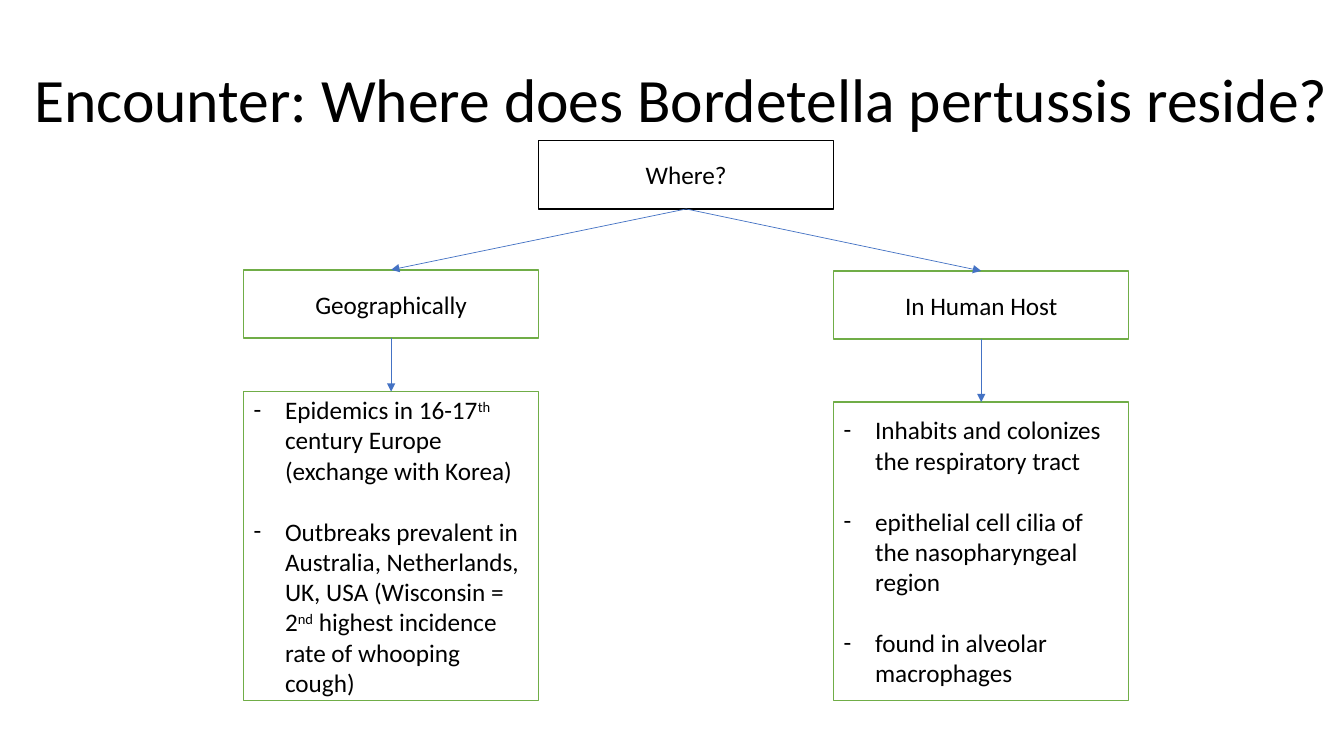
import dataclasses

import pptx
import pptx.dml.color
import pptx.enum.shapes
import pptx.enum.text
import pptx.oxml
import pptx.oxml.ns
import pptx.util

PX = 9525
WIDE, HIGH = 1280, 720
ALIGN = pptx.enum.text.PP_ALIGN
TOP, BASE = 0, 2  # connection sites of a rectangle


@dataclasses.dataclass(frozen=True)
class Theme:
    font: str = "Calibri"
    ink: str = "000000"
    paper: str = "FFFFFF"
    leaf: str = "70AD47"
    arrow: str = "4472C4"
    head: int = 44
    body: int = 18
    edge: float = 1
    thin: float = 0.5
    gap: int = 22


THEME = Theme()

# Each point is a list of (text, raised) runs.
PLACES = [
    [("Epidemics in 16-17", False), ("th", True),
     (" century Europe (exchange with Korea)", False)],
    [("Outbreaks prevalent in Australia, Netherlands, UK, USA (Wisconsin = 2", False),
     ("nd", True), (" highest incidence rate of whooping cough)", False)],
]
HOST = [
    [("Inhabits and colonizes the respiratory tract", False)],
    [("epithelial cell cilia of the nasopharyngeal region", False)],
    [("found in alveolar macrophages", False)],
]


def px(*sizes):
    return [pptx.util.Emu(size * PX) for size in sizes]


def color(code):
    return pptx.dml.color.RGBColor.from_string(code)


def add_xml(parent, tag, **attrs):
    node = pptx.oxml.parse_xml(f"<a:{tag} {pptx.oxml.ns.nsdecls('a')}/>")
    for name, value in attrs.items():
        node.set(name, value)
    parent.append(node)


def add_run(para, text, size, raised=False):
    run = para.add_run()
    run.text = text
    run.font.name = THEME.font
    run.font.size = pptx.util.Pt(size)
    run.font.color.rgb = color(THEME.ink)
    if raised:
        run.font._element.set("baseline", "30000")


def set_frame(shape):
    frame = shape.text_frame
    frame.word_wrap = True
    frame.vertical_anchor = pptx.enum.text.MSO_ANCHOR.MIDDLE
    return frame


def add_title(slide, box, text):
    para = set_frame(slide.shapes.add_textbox(*px(*box))).paragraphs[0]
    para.line_spacing = 0.9
    add_run(para, text, THEME.head)


def add_box(slide, box, edge):
    shape = slide.shapes.add_shape(
        pptx.enum.shapes.MSO_SHAPE.RECTANGLE, *px(*box))
    shape.shadow.inherit = False
    shape.fill.solid()
    shape.fill.fore_color.rgb = color(THEME.paper)
    shape.line.color.rgb = color(edge)
    shape.line.width = pptx.util.Pt(THEME.edge)
    return shape


def add_label(slide, box, text, edge):
    shape = add_box(slide, box, edge)
    para = set_frame(shape).paragraphs[0]
    para.alignment = ALIGN.CENTER
    add_run(para, text, THEME.body)
    return shape


def add_list(slide, box, points):
    shape = add_box(slide, box, THEME.leaf)
    frame = set_frame(shape)
    for i, point in enumerate(points):
        para = frame.add_paragraph() if i else frame.paragraphs[0]
        para.alignment = ALIGN.LEFT
        para.space_before = pptx.util.Pt(THEME.gap if i else 0)
        props = para._p.get_or_add_pPr()
        indent = 30 * PX
        props.set("marL", str(indent))
        props.set("indent", str(-indent))
        add_xml(props, "buFont", typeface=THEME.font)
        add_xml(props, "buChar", char="-")
        for text, raised in point:
            add_run(para, text, THEME.body, raised)
    return shape


def add_arrow(slide, start, end):
    """Link the base of one box to the top of another."""
    link = slide.shapes.add_connector(
        pptx.enum.shapes.MSO_CONNECTOR.STRAIGHT, 0, 0, 0, 0)
    link.begin_connect(start, BASE)
    link.end_connect(end, TOP)
    link.line.color.rgb = color(THEME.arrow)
    link.line.width = pptx.util.Pt(THEME.thin)
    add_xml(link.line._get_or_add_ln(), "tailEnd", type="triangle")
    add_xml(link._element.spPr, "effectLst")


def add_branch(slide, box, root, label, points, drop):
    """Place a label at the top of the box and its list below, drop px apart."""
    left, top, width, height = box
    tall = 65
    node = add_label(slide, (left, top, width, tall), label, THEME.leaf)
    skip = tall + drop
    notes = add_list(slide, (left, top + skip, width, height - skip), points)
    add_arrow(slide, root, node)
    add_arrow(slide, node, notes)


def add_tree(slide, box):
    """Fill the box with a root in the middle third and a branch on each side."""
    left, top, width, height = box
    col = width // 3
    root = add_label(slide, (left + col, top, col, 65), "Where?", THEME.ink)
    branches = [
        (0, 123, "Geographically", PLACES, 51),
        (2, 124, "In Human Host", HOST, 60),
    ]
    for place, down, label, points, drop in branches:
        area = (left + place * col, top + down, col, height - down)
        add_branch(slide, area, root, label, points, drop)


def main():
    deck = pptx.Presentation()
    deck.slide_width, deck.slide_height = px(WIDE, HIGH)
    slide = deck.slides.add_slide(deck.slide_layouts[6])
    add_title(slide, (23, 28, 1290, 139),
              "Encounter: Where does Bordetella pertussis reside?")
    add_tree(slide, (232, 134, 843, 533))
    deck.save("out.pptx")


if __name__ == "__main__":
    main()
